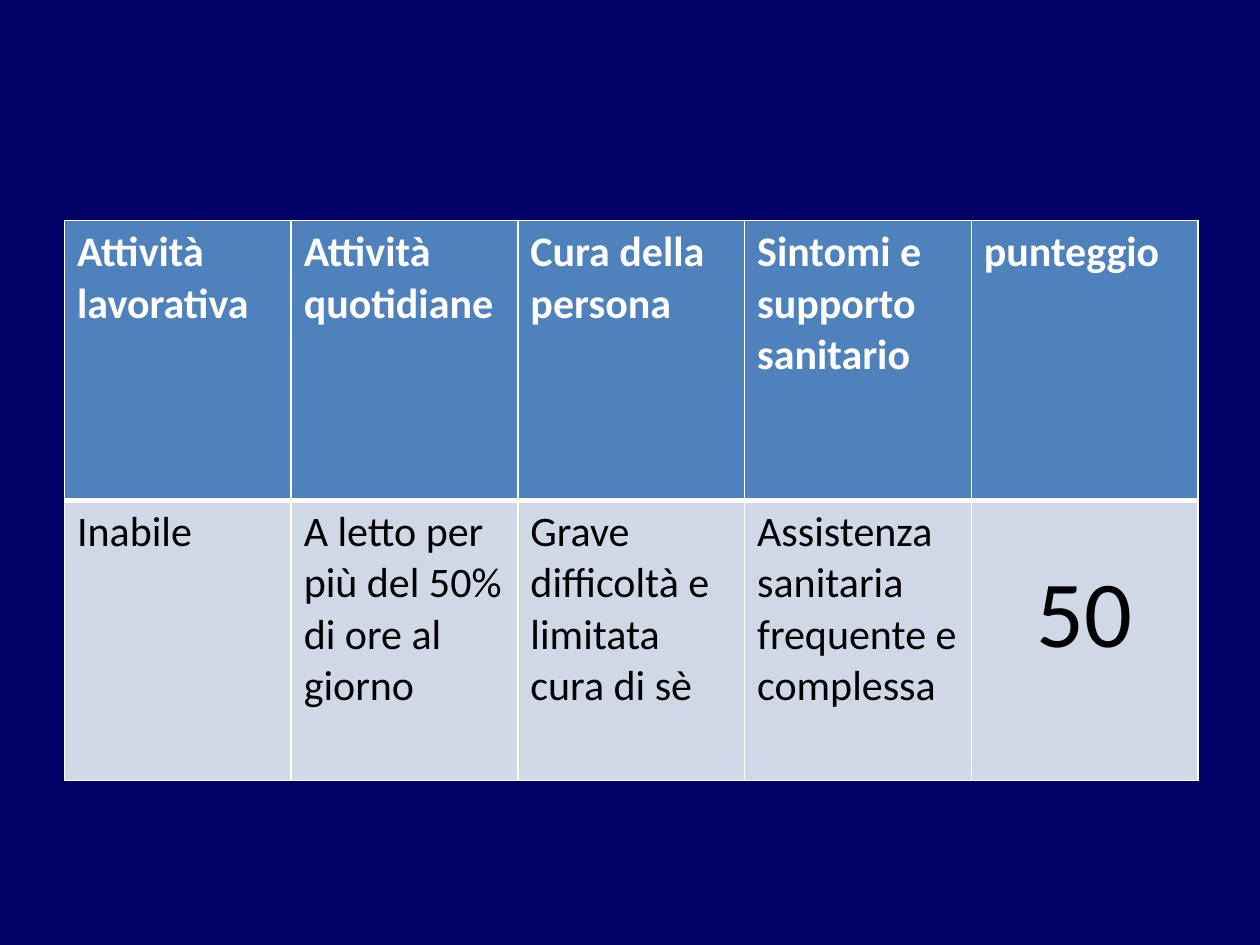
from lxml.etree import SubElement
from pptx import Presentation
from pptx.dml.color import RGBColor
from pptx.enum.text import PP_ALIGN
from pptx.oxml.ns import qn
from pptx.util import Cm, Pt

COLORS = {
    "background": "000066",
    "header": "4F81BD",
    "body": "D0D8E8",
    "border": "FFFFFF",
    "header_text": "FFFFFF",
    "body_text": "000000",
}
FONT = "Calibri"
HEADERS = ["Attività lavorativa", "Attività quotidiane", "Cura della persona",
           "Sintomi e supporto sanitario", "punteggio"]
VALUES = ["Inabile", "A letto per più del 50% di ore al giorno",
          "Grave difficoltà e limitata cura di sè",
          "Assistenza sanitaria frequente e complessa", "50"]


def rgb(name):
    return RGBColor.from_string(COLORS[name])


def set_borders(cell, **widths):
    """Draw borders, given as points for each side in the order L, R, T, B."""
    tc_pr = cell._tc.get_or_add_tcPr()
    for side, width in widths.items():
        ln = SubElement(tc_pr, qn(f"a:ln{side}"), w=str(Pt(width)))
        fill = SubElement(ln, qn("a:solidFill"))
        SubElement(fill, qn("a:srgbClr"), val=COLORS["border"])


def style_cell(cell, text, kind):
    is_header = kind == "header"
    # Borders come before the fill in the cell properties
    set_borders(cell, L=1, R=1, T=1 if is_header else 3, B=3 if is_header else 1)
    cell.fill.solid()
    cell.fill.fore_color.rgb = rgb(kind)
    cell.text = text
    p = cell.text_frame.paragraphs[0]
    p.font.name = FONT
    p.font.size = Pt(24)
    p.font.bold = is_header
    p.font.color.rgb = rgb(f"{kind}_text")


def add_score_table(s, left, top, width, height):
    rows = [("header", HEADERS), ("body", VALUES)]
    table = s.shapes.add_table(len(rows), len(HEADERS), left, top, width, height).table
    for r, (kind, texts) in enumerate(rows):
        for c, text in enumerate(texts):
            style_cell(table.cell(r, c), text, kind)

    # Large score, centred and lowered in its cell
    score = table.cell(1, len(VALUES) - 1)
    score.margin_top = Cm(1.15)
    p = score.text_frame.paragraphs[0]
    p.alignment = PP_ALIGN.CENTER
    p.font.size = Pt(54)


def main():
    prs = Presentation()
    prs.slide_width, prs.slide_height = Cm(25.4), Cm(19.05)
    s = prs.slides.add_slide(prs.slide_layouts[6])
    s.background.fill.solid()
    s.background.fill.fore_color.rgb = rgb("background")
    add_score_table(s, Cm(1.3), Cm(4.45), Cm(22.85), Cm(11.28))
    prs.save("out.pptx")


if __name__ == "__main__":
    main()
